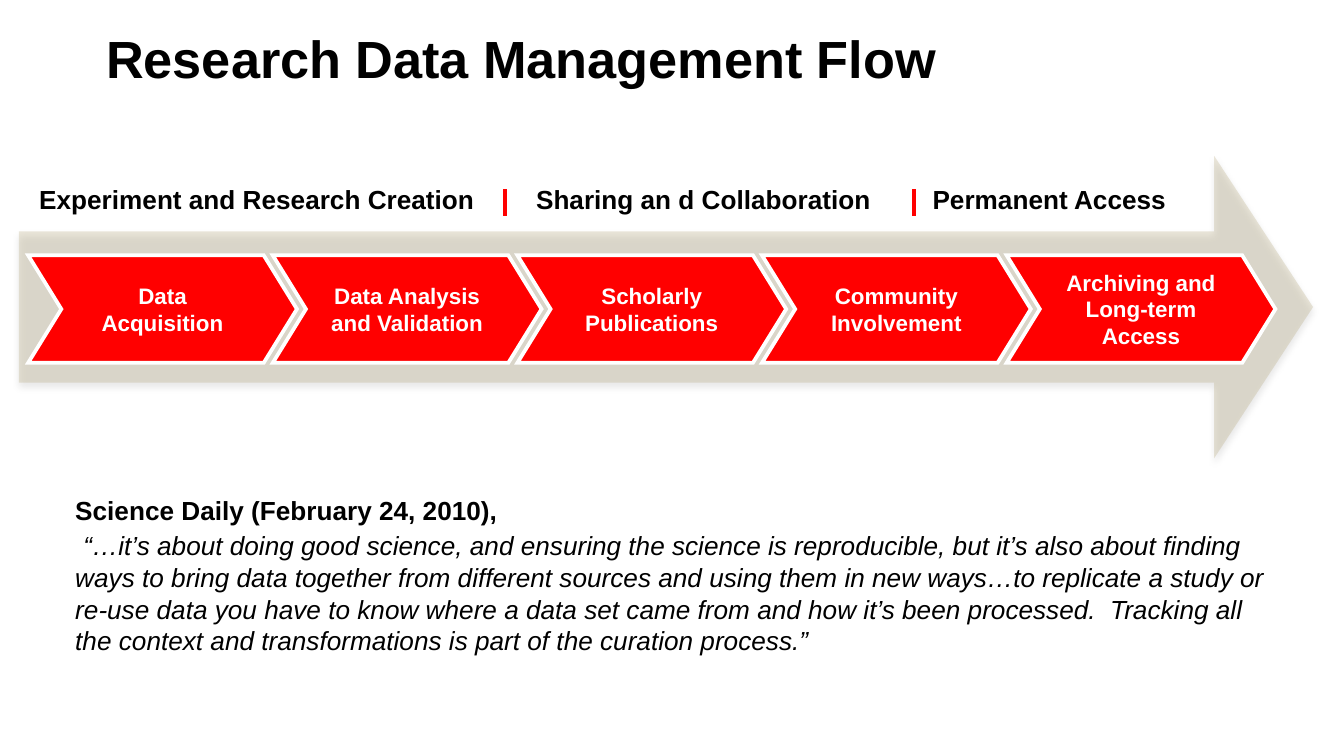
"""Builds the research data management flow slide."""
from lxml import etree
from pptx import Presentation
from pptx.dml.color import RGBColor
from pptx.enum.shapes import MSO_CONNECTOR, MSO_SHAPE
from pptx.enum.text import MSO_ANCHOR, PP_ALIGN
from pptx.oxml.ns import qn
from pptx.util import Inches, Pt

STRAIGHT = MSO_CONNECTOR.STRAIGHT
ARROW, CHEVRON = MSO_SHAPE.RIGHT_ARROW, MSO_SHAPE.CHEVRON
LEFT, CENTER, RIGHT = PP_ALIGN.LEFT, PP_ALIGN.CENTER, PP_ALIGN.RIGHT
TOP, MIDDLE = MSO_ANCHOR.TOP, MSO_ANCHOR.MIDDLE

COLORS = {"text": "000000", "light": "FFFFFF", "accent": "FF0000", "arrow": "B1A171"}
STEPS = [
    "Data Acquisition",
    "Data Analysis and Validation",
    "Scholarly Publications",
    "Community Involvement",
    "Archiving and Long-term Access",
]
PHASES = [
    ("Experiment and Research Creation", 0.12, 3.51, RIGHT),
    ("Sharing an d Collaboration", 3.89, 2.78, LEFT),
    ("Permanent Access", 6.84, 2.78, LEFT),
]
DIVIDERS = [3.76, 6.8]
SOURCE = "Science Daily (February 24, 2010),"
QUOTE = (
    "“…it’s about doing good science, and ensuring the science is reproducible, "
    "but it’s also about finding ways to bring data together from different sources "
    "and using them in new ways…to replicate a study or re-use data you have to know "
    "where a data set came from and how it’s been processed.  Tracking all the context "
    "and transformations is part of the curation process.”"
)


def rgb(name):
    """Return the named colour."""
    return RGBColor.from_string(COLORS[name])


def add_text(p, text, size=14, color="text", bold=False, italic=False, align=LEFT, spacing=None):
    """Add a formatted run to a paragraph."""
    p.alignment = align
    if spacing:
        p.line_spacing = spacing
    r = p.add_run()
    r.text = text
    font = r.font
    font.name, font.size, font.bold, font.italic = "Arial", Pt(size), bold, italic
    font.color.rgb = rgb(color)


def set_frame(sp, anchor=MIDDLE, side=0.1, edge=0.05):
    """Wrap, anchor and inset the text of a shape and return its frame."""
    tf = sp.text_frame
    tf.word_wrap = True
    tf.vertical_anchor = anchor
    tf.margin_left = tf.margin_right = Inches(side)
    tf.margin_top = tf.margin_bottom = Inches(edge)
    return tf


def add_box(s, x, y, w, h, **frame):
    """Add a text box and return its frame."""
    sp = s.shapes.add_textbox(Inches(x), Inches(y), Inches(w), Inches(h))
    return set_frame(sp, **frame)


def add_title(s, text):
    """Place and fill the title placeholder."""
    sp = s.shapes.title
    sp.left, sp.top, sp.width, sp.height = Inches(0.7), Inches(0.11), Inches(9.3), Inches(0.69)
    tf = set_frame(sp, side=0.09)
    add_text(tf.paragraphs[0], text, size=28, bold=True, spacing=0.9)


def add_arrow(s):
    """Add the translucent background arrow with its soft shadow."""
    sp = s.shapes.add_shape(ARROW, Inches(0.14), Inches(1.16), Inches(9.63), Inches(2.25))
    sp.adjustments[0], sp.adjustments[1] = 0.5, 0.327
    sp.fill.solid()
    sp.fill.fore_color.rgb = rgb("arrow")
    sp.line.fill.background()
    sp.shadow.inherit = False
    sp_pr = sp._element.spPr
    color = sp_pr.find(qn("a:solidFill")).find(qn("a:srgbClr"))
    etree.SubElement(color, qn("a:alpha"), val="26000")
    shadow = etree.SubElement(
        sp_pr.find(qn("a:effectLst")), qn("a:outerShdw"),
        blurRad=str(Pt(3.1)), dist=str(Pt(1.8)), dir="5400000", rotWithShape="0",
    )
    black = etree.SubElement(shadow, qn("a:srgbClr"), val=COLORS["text"])
    etree.SubElement(black, qn("a:alpha"), val="35000")


def add_step(s, text, x):
    """Add one sharp-cornered chevron of the flow."""
    sp = s.shapes.add_shape(CHEVRON, Inches(x), Inches(1.9), Inches(2), Inches(0.8))
    sp.adjustments[0] = 0.309
    sp.fill.solid()
    sp.fill.fore_color.rgb = rgb("accent")
    sp.line.color.rgb = rgb("light")
    sp.line.width = Pt(2)
    etree.SubElement(sp._element.spPr.find(qn("a:ln")), qn("a:miter"), lim="800000")
    sp.shadow.inherit = False
    tf = set_frame(sp, side=0.12)
    add_text(tf.paragraphs[0], text, size=12, color="light", bold=True, align=CENTER)


def add_divider(s, x):
    """Add a short vertical line between phases."""
    line = s.shapes.add_connector(STRAIGHT, Inches(x), Inches(1.41), Inches(x), Inches(1.61))
    line.line.color.rgb = rgb("accent")
    line.line.width = Pt(2)
    etree.SubElement(line._element.spPr, qn("a:effectLst"))


def add_quote(s):
    """Add the source line and the quotation."""
    tf = add_box(s, 0.56, 3.68, 8.91, 1.27, anchor=TOP, side=0, edge=0)
    add_text(tf.paragraphs[0], SOURCE, bold=True)
    p = tf.add_paragraph()
    add_text(p, " ", size=16)
    add_text(p, QUOTE, italic=True)


def main():
    """Build and save the slide."""
    prs = Presentation()
    prs.slide_width = Inches(10)
    prs.slide_height = Inches(10 * 9 / 16)
    s = prs.slides.add_slide(prs.slide_layouts[5])
    add_title(s, "Research Data Management Flow")
    add_arrow(s)
    for i, text in enumerate(STEPS):
        add_step(s, text, 0.21 + 1.82 * i)
    for text, x, w, align in PHASES:
        tf = add_box(s, x, 1.4, w, 0.25)
        add_text(tf.paragraphs[0], text, bold=True, align=align, spacing=Pt(10))
    for x in DIVIDERS:
        add_divider(s, x)
    add_quote(s)
    prs.save("out.pptx")


if __name__ == "__main__":
    main()
